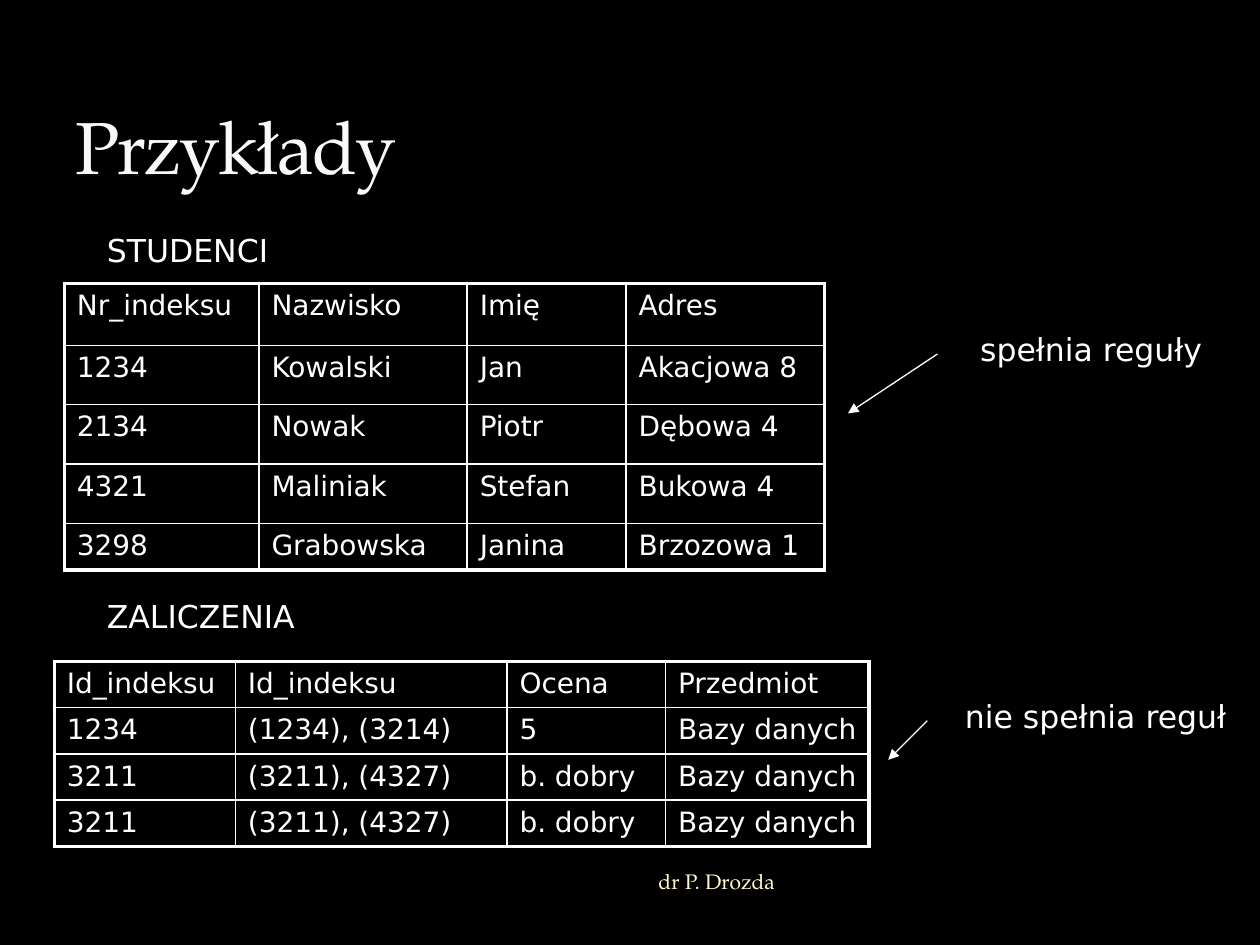
from lxml.etree import SubElement
from pptx import Presentation
from pptx.dml.color import RGBColor
from pptx.enum.shapes import MSO_CONNECTOR
from pptx.enum.text import MSO_ANCHOR, PP_ALIGN
from pptx.oxml import parse_xml
from pptx.oxml.ns import nsdecls, qn
from pptx.util import Pt

COLORS = {"background": "000000", "text": "FFFFFF", "title": "F9F9F9", "footer": "FEFAC9"}
SANS = "DejaVu Sans"
SERIF = "TeX Gyre Pagella"

STUDENTS = [
    ["Nr_indeksu", "Nazwisko", "Imię", "Adres"],
    ["1234", "Kowalski", "Jan", "Akacjowa 8"],
    ["2134", "Nowak", "Piotr", "Dębowa 4"],
    ["4321", "Maliniak", "Stefan", "Bukowa 4"],
    ["3298", "Grabowska", "Janina", "Brzozowa 1"],
]
GRADES = [
    ["Id_indeksu", "Id_indeksu", "Ocena", "Przedmiot"],
    ["1234", "(1234), (3214)", "5", "Bazy danych"],
    ["3211", "(3211), (4327)", "b. dobry", "Bazy danych"],
    ["3211", "(3211), (4327)", "b. dobry", "Bazy danych"],
]


class SlideBuilder:
    """Draws styled elements on one slide, with lengths in points."""

    def __init__(self, slide):
        self.slide = slide
        fill = slide.background.fill
        fill.solid()
        fill.fore_color.rgb = RGBColor.from_string(COLORS["background"])

    def add_span(self, para, text, size, font=SANS, color="text"):
        span = para.add_run()
        span.text = text
        span.font.size = Pt(size)
        span.font.name = font
        span.font.color.rgb = RGBColor.from_string(COLORS[color])
        return span

    def text(self, place, text, size=18, font=SANS, color="text",
             anchor=MSO_ANCHOR.TOP, align=PP_ALIGN.LEFT):
        box = self.slide.shapes.add_textbox(*map(Pt, place))
        frame = box.text_frame
        frame.word_wrap = True
        frame.vertical_anchor = anchor
        para = frame.paragraphs[0]
        para.alignment = align
        return frame, self.add_span(para, text, size, font, color)

    def title(self, place, text):
        frame, span = self.text(place, text, 42, SERIF, "title", MSO_ANCHOR.BOTTOM)
        frame.margin_bottom = 0
        span.font._element.set("spc", "-100")

    def border(self, cell, edges):
        properties = cell._tc.get_or_add_tcPr()
        for index, (side, width) in enumerate(edges.items()):
            line = parse_xml(
                f'<a:ln{side} {nsdecls("a")} w="{Pt(width)}"><a:solidFill>'
                f'<a:srgbClr val="{COLORS["text"]}"/></a:solidFill></a:ln{side}>')
            properties.insert(index, line)

    def table(self, left, top, widths, heights, rows):
        frame = self.slide.shapes.add_table(
            len(rows), len(widths), Pt(left), Pt(top), Pt(sum(widths)), Pt(sum(heights)))
        table = frame.table
        table.first_row = table.horz_banding = False
        for column, width in zip(table.columns, widths):
            column.width = Pt(width)
        last_row, last_column = len(rows) - 1, len(widths) - 1
        for r, (values, height) in enumerate(zip(rows, heights)):
            table.rows[r].height = Pt(height)
            for c, value in enumerate(values):
                cell = table.cell(r, c)
                cell.fill.background()
                self.add_span(cell.text_frame.paragraphs[0], value, 16)
                outer = {"L": c == 0, "R": c == last_column, "T": r == 0, "B": r == last_row}
                self.border(cell, {side: 2.25 if edge else 1 for side, edge in outer.items()})

    def arrow(self, *points):
        arrow = self.slide.shapes.add_connector(MSO_CONNECTOR.STRAIGHT, *map(Pt, points))
        arrow.line.width = Pt(0.75)
        arrow.line.color.rgb = RGBColor.from_string(COLORS["text"])
        SubElement(arrow.line._get_or_add_ln(), qn("a:tailEnd"), type="triangle")
        SubElement(arrow._element.spPr, qn("a:effectLst"))


def main():
    deck = Presentation()
    deck.slide_width, deck.slide_height = Pt(720), Pt(540)
    page = SlideBuilder(deck.slides.add_slide(deck.slide_layouts[6]))

    page.text((167.8, 488.2, 282.2, 30.2), "dr P. Drozda", 12, SERIF, "footer",
              MSO_ANCHOR.MIDDLE, PP_ALIGN.RIGHT)
    page.title((36, 12.2, 648, 95.8), "Przykłady")
    page.table(36.8, 162, [111.2, 119, 90.8, 113.5], [35.3, 34, 34, 34, 25.8], STUDENTS)
    page.table(31, 378, [103.5, 155.2, 90.6, 116.4], [25.8] * 4, GRADES)
    page.text((54, 128.2, 147.6, 28.8), "STUDENCI")
    page.text((54, 337.7, 147.6, 28.8), "ZALICZENIA")
    page.text((553, 185, 147.6, 28.8), "spełnia reguły")
    page.arrow(535.7, 202.3, 484.6, 236.2)
    page.text((544.3, 394.6, 175.7, 28.8), "nie spełnia reguł")
    page.arrow(529.9, 411.8, 507.6, 434.2)
    deck.save("out.pptx")


if __name__ == "__main__":
    main()
